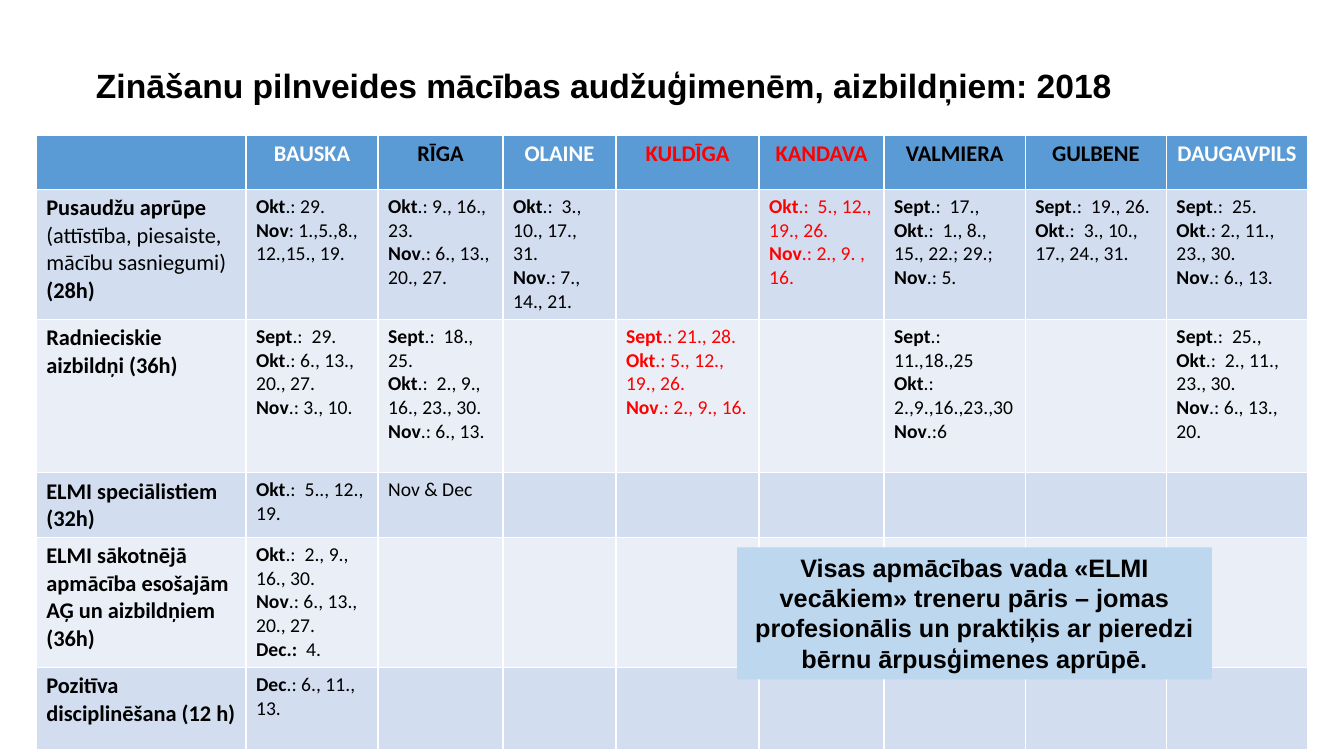
from dataclasses import dataclass

from pptx import Presentation
from pptx.dml.color import RGBColor
from pptx.enum.text import MSO_ANCHOR, PP_ALIGN
from pptx.table import _Cell
from pptx.text.text import TextFrame
from pptx.util import Inches, Pt

BLACK = RGBColor(0x00, 0x00, 0x00)
WHITE = RGBColor(0xFF, 0xFF, 0xFF)
RED = RGBColor(0xFF, 0x00, 0x00)
BLUE = RGBColor(0x5B, 0x9B, 0xD5)
SKY = RGBColor(0xBD, 0xD7, 0xEE)
BANDS = (RGBColor(0xD2, 0xDE, 0xEF), RGBColor(0xEA, 0xEF, 0xF7))

HEAD_H = 0.54
TOPIC_W = 2.08


@dataclass(frozen=True)
class Town:
    name: str
    width: float
    color: RGBColor = BLACK


@dataclass(frozen=True)
class Course:
    topic: str
    height: float
    dates: dict[str, str]


TOWNS = (
    Town("BAUSKA", 1.31, WHITE),
    Town("RĪGA", 1.24),
    Town("OLAINE", 1.12, WHITE),
    Town("KULDĪGA", 1.42, RED),
    Town("KANDAVA", 1.24, RED),
    Town("VALMIERA", 1.4),
    Town("GULBENE", 1.4),
    Town("DAUGAVPILS", 1.4, WHITE),
)

# Text between asterisks is bold.
COURSES = (
    Course("*Pusaudžu aprūpe* (attīstība, piesaiste, mācību sasniegumi) *(28h)*", 1.29, {
        "BAUSKA": "*Okt*.: 29.\n*Nov*: 1.,5.,8., 12.,15., 19.",
        "RĪGA": "*Okt*.: 9., 16., 23.\n*Nov*.: 6., 13., 20., 27.",
        "OLAINE": "*Okt*.:  3., 10., 17., 31.\n*Nov*.: 7., 14., 21.",
        "KANDAVA": "*Okt*.:  5., 12., 19., 26.\n*Nov*.: 2., 9. , 16.",
        "VALMIERA": "*Sept*.:  17.,\n*Okt*.:  1., 8., 15., 22.; 29.;\n*Nov*.: 5.",
        "GULBENE": "*Sept*.:  19., 26.\n*Okt*.:  3., 10., 17., 24., 31.",
        "DAUGAVPILS": "*Sept*.:  25.\n*Okt*.: 2., 11., 23., 30.\n*Nov*.: 6., 13.",
    }),
    Course("*Radnieciskie aizbildņi (36h)*", 1.52, {
        "BAUSKA": "*Sept*.:  29.\n*Okt*.: 6., 13., 20., 27.\n*Nov*.: 3., 10.",
        "RĪGA": "*Sept*.:  18., 25.\n*Okt*.:  2., 9., 16., 23., 30.\n*Nov*.: 6., 13.",
        "KULDĪGA": "*Sept*.: 21., 28.\n*Okt*.: 5., 12., 19., 26.\n*Nov*.: 2., 9., 16.",
        "VALMIERA": "*Sept*.:  11.,18.,25\n*Okt*.: 2.,9.,16.,23.,30\n*Nov*.:6",
        "DAUGAVPILS": "*Sept*.:  25.,\n*Okt*.:  2., 11., 23., 30.\n*Nov*.: 6., 13., 20.",
    }),
    Course("*ELMI speciālistiem (32h)*", 0.64, {
        "BAUSKA": "*Okt*.:  5.., 12., 19.",
        "RĪGA": "Nov & Dec",
    }),
    Course("*ELMI sākotnējā apmācība esošajām AĢ un aizbildņiem (36h)*", 1.29, {
        "BAUSKA": "*Okt*.:  2., 9., 16., 30.\n*Nov*.: 6., 13., 20., 27.\n*Dec.:*  4.",
    }),
    Course("*Pozitīva disciplinēšana (12 h)*", 0.81, {
        "BAUSKA": "*Dec*.: 6., 11., 13.",
    }),
)


def write(frame: TextFrame, text: str, *, size: float, font: str = "Calibri",
          color: RGBColor = BLACK, align: PP_ALIGN = PP_ALIGN.LEFT,
          leading: float = 1.0) -> None:
    """Fill a frame, one paragraph a line, with asterisks around bold parts."""
    for row, line in enumerate(text.split("\n")):
        para = frame.add_paragraph() if row else frame.paragraphs[0]
        para.alignment = align
        para.line_spacing = leading
        for part, words in enumerate(line.split("*")):
            if words:
                run = para.add_run()
                run.text = words
                run.font.name = font
                run.font.size = Pt(size)
                run.font.bold = part % 2 == 1
                run.font.color.rgb = color


def paint(cell: _Cell, color: RGBColor) -> None:
    cell.fill.solid()
    cell.fill.fore_color.rgb = color


def add_title(slide) -> None:
    title = slide.shapes.title
    title.left, title.top = Inches(0.24), Inches(0.14)
    title.width, title.height = Inches(11.5), Inches(1.45)
    title.text_frame.vertical_anchor = MSO_ANCHOR.MIDDLE
    write(title.text_frame, "*Zināšanu pilnveides mācības audžuģimenēm, aizbildņiem: 2018*",
          size=24, font="Arial", align=PP_ALIGN.CENTER, leading=0.9)


def add_plan(slide) -> None:
    widths = [TOPIC_W, *(town.width for town in TOWNS)]
    heights = [HEAD_H, *(course.height for course in COURSES)]
    table = slide.shapes.add_table(
        len(heights), len(widths), Inches(0.36), Inches(1.34),
        Inches(sum(widths)), Inches(sum(heights))).table
    for column, width in zip(table.columns, widths):
        column.width = Inches(width)
    for row, height in zip(table.rows, heights):
        row.height = Inches(height)

    paint(table.cell(0, 0), BLUE)
    for col, town in enumerate(TOWNS, 1):
        cell = table.cell(0, col)
        paint(cell, BLUE)
        write(cell.text_frame, f"*{town.name}*", size=16, color=town.color,
              align=PP_ALIGN.CENTER)

    for row, course in enumerate(COURSES, 1):
        band = BANDS[(row - 1) % 2]
        topic = table.cell(row, 0)
        paint(topic, band)
        write(topic.text_frame, course.topic, size=16)
        for col, town in enumerate(TOWNS, 1):
            cell = table.cell(row, col)
            paint(cell, band)
            write(cell.text_frame, course.dates.get(town.name, ""), size=14,
                  color=RED if town.color == RED else BLACK)


def add_note(slide) -> None:
    note = slide.shapes.add_textbox(Inches(7.31), Inches(5.43), Inches(4.71), Inches(1.31))
    note.fill.solid()
    note.fill.fore_color.rgb = SKY
    note.text_frame.word_wrap = True
    write(note.text_frame,
          "*Visas apmācības vada «ELMI vecākiem» treneru pāris – jomas profesionālis "
          "un praktiķis ar pieredzi bērnu ārpusģimenes aprūpē.*",
          size=18, font="Arial", align=PP_ALIGN.CENTER)


def main() -> None:
    deck = Presentation()
    deck.slide_width, deck.slide_height = Inches(13.33), Inches(7.5)
    slide = deck.slides.add_slide(deck.slide_layouts[5])
    add_title(slide)
    add_plan(slide)
    add_note(slide)
    deck.save("out.pptx")


if __name__ == "__main__":
    main()
